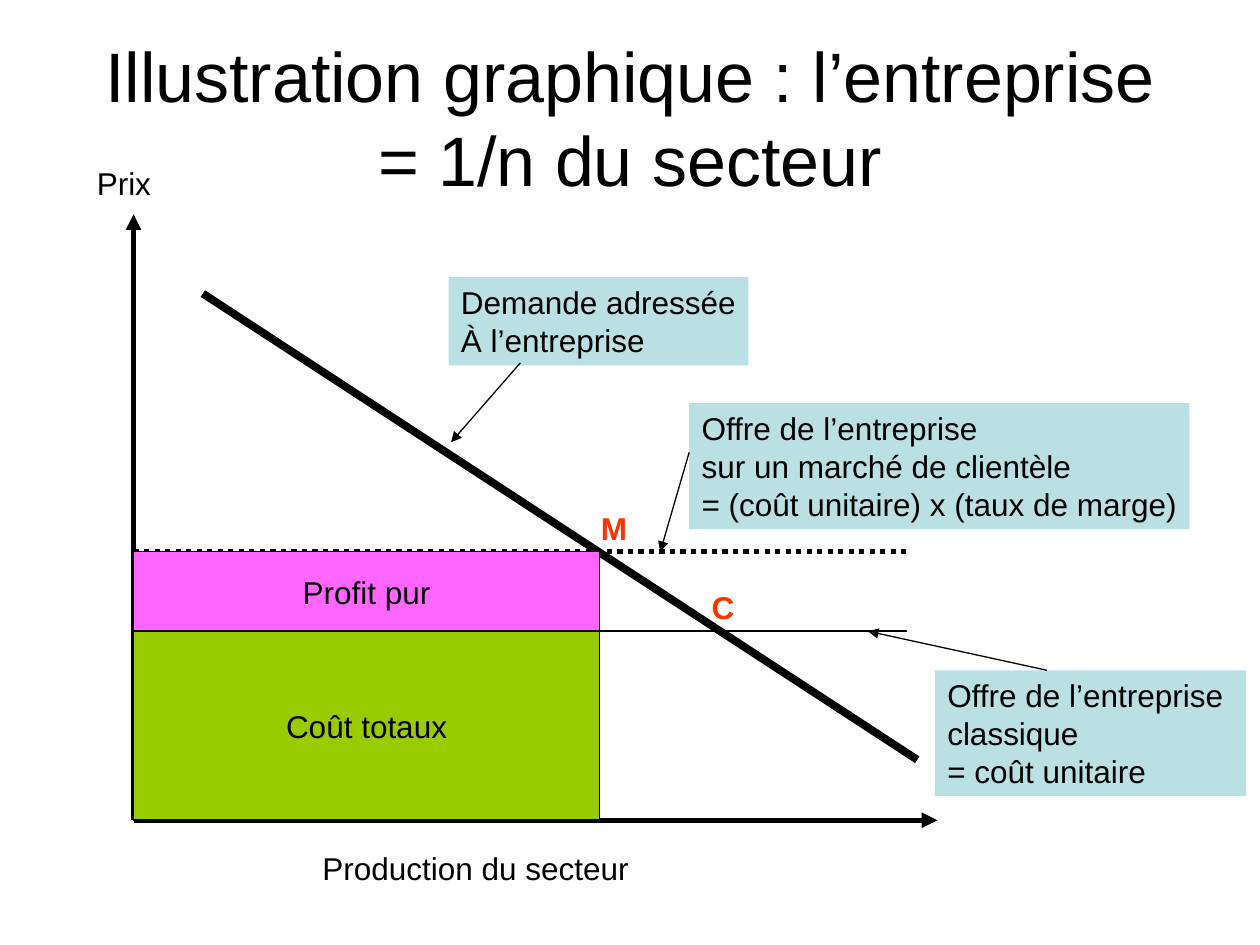
from pptx import Presentation
from pptx.dml.color import RGBColor as RGB
from pptx.enum.dml import MSO_LINE as Dash
from pptx.enum.shapes import MSO_CONNECTOR as Conn, MSO_SHAPE as Shape
from pptx.enum.text import MSO_ANCHOR as Anchor, PP_ALIGN as Align
from pptx.oxml.ns import qn
from pptx.util import Inches, Pt
from lxml.etree import SubElement as Sub

THEME = dict(font="Arial", title=40, body=18, ink="000000", mark="FF3300",
             note="BBE0E3", cost="99CC00", gain="FF66FF",
             thin=0.75, rule=1, axis=3, curve=4.5)
WIDE, HIGH = 10, 7.5

# Chart levels, in inches
LEFT, BASE = 1.06, 6.51
TOP, END = 1.7, 7.44
COST, PRICE = 5.01, 4.38
SOLD, REACH = 4.76, 7.2

TITLE = "Illustration graphique : l’entreprise = 1/n du secteur"

# start, end, weight, arrow, dash
LINES = [
    ((LEFT, BASE), (LEFT, TOP), "axis", True, None),
    ((LEFT, BASE), (END, BASE), "axis", True, None),
    ((LEFT, COST), (REACH, COST), "rule", False, None),
    ((LEFT, PRICE), (REACH, PRICE), "axis", False, Dash.ROUND_DOT),
    ((1.61, 2.33), (7.28, 6.03), "curve", False, None),
]

# box, lines of text, pointer start, pointer end
NOTES = [
    ((3.56, 2.2, 2.38, 0.7), ["Demande adressée", "À l’entreprise"],
     (4.13, 2.88), (3.58, 3.51)),
    ((7.42, 5.32, 2.47, 1), ["Offre de l’entreprise", "classique", "= coût unitaire"],
     (8.31, 5.32), (6.89, COST)),
    ((5.47, 3.2, 3.97, 1), ["Offre de l’entreprise", "sur un marché de clientèle",
                            "= (coût unitaire) x (taux de marge)"],
     (5.47, 3.59), (5.24, PRICE)),
]

# left, top, width, text, is a point
LABELS = [
    (2.46, 6.69, 2.63, "Production du secteur", False),
    (0.67, 1.25, 0.63, "Prix", False),
    (5.55, 4.62, 0.38, "C", True),
    (4.67, 3.99, 0.41, "M", True),
]

# top, bottom, fill, text
AREAS = [
    (COST, BASE, "cost", "Coût totaux"),
    (PRICE, COST, "gain", "Profit pur"),
]


def tint(name):
    return RGB.from_string(THEME[name])


def write(shape, text, size="body", color="ink", bold=False, mid=False, wrap=False):
    frame = shape.text_frame
    frame.text = text
    frame.word_wrap = wrap
    frame.vertical_anchor = Anchor.MIDDLE if mid else Anchor.TOP
    for para in frame.paragraphs:
        para.alignment = Align.CENTER if mid else Align.LEFT
        for run in para.runs:
            font = run.font
            font.name, font.size, font.bold = THEME["font"], Pt(THEME[size]), bold
            font.color.rgb = tint(color)


def label(slide, box, text, **style):
    write(slide.shapes.add_textbox(*map(Inches, box)), text, **style)


def block(slide, box, fill, text, edge=False, mid=False):
    shape = slide.shapes.add_shape(Shape.RECTANGLE, *map(Inches, box))
    shape.shadow.inherit = False
    shape.fill.solid()
    shape.fill.fore_color.rgb = tint(fill)
    if edge:
        shape.line.color.rgb = tint("ink")
        shape.line.width = Pt(THEME["thin"])
    else:
        shape.line.fill.background()
    write(shape, text, mid=mid)


def line(slide, start, end, weight, arrow=False, dash=None):
    link = slide.shapes.add_connector(Conn.STRAIGHT, *map(Inches, start + end))
    link.line.color.rgb = tint("ink")
    link.line.width = Pt(THEME[weight])
    if dash:
        link.line.dash_style = dash
    props = link._element.spPr
    if arrow:
        Sub(props.find(qn("a:ln")), qn("a:tailEnd"), type="triangle")
    Sub(props, qn("a:effectLst"))


def main():
    deck = Presentation()
    deck.slide_width, deck.slide_height = Inches(WIDE), Inches(HIGH)
    slide = deck.slides.add_slide(deck.slide_layouts[6])

    # Title
    label(slide, (0.05 * WIDE, 0.04 * HIGH, 0.9 * WIDE, 1.25), TITLE,
          size="title", mid=True, wrap=True)

    # Axes, supply levels and demand
    for item in LINES:
        line(slide, *item)

    # Notes, then their pointers
    for box, rows, _, _ in NOTES:
        block(slide, box, "note", "\n".join(rows))
    for _, _, start, end in NOTES:
        line(slide, start, end, "thin", arrow=True)

    # Axis names and points
    for left, top, wide, text, point in LABELS:
        label(slide, (left, top, wide, 0.4), text,
              color="mark" if point else "ink", bold=point)

    # Cost and profit areas
    for top, low, fill, text in AREAS:
        block(slide, (LEFT, top, SOLD - LEFT, low - top), fill, text, edge=True, mid=True)

    deck.save("out.pptx")


if __name__ == "__main__":
    main()
